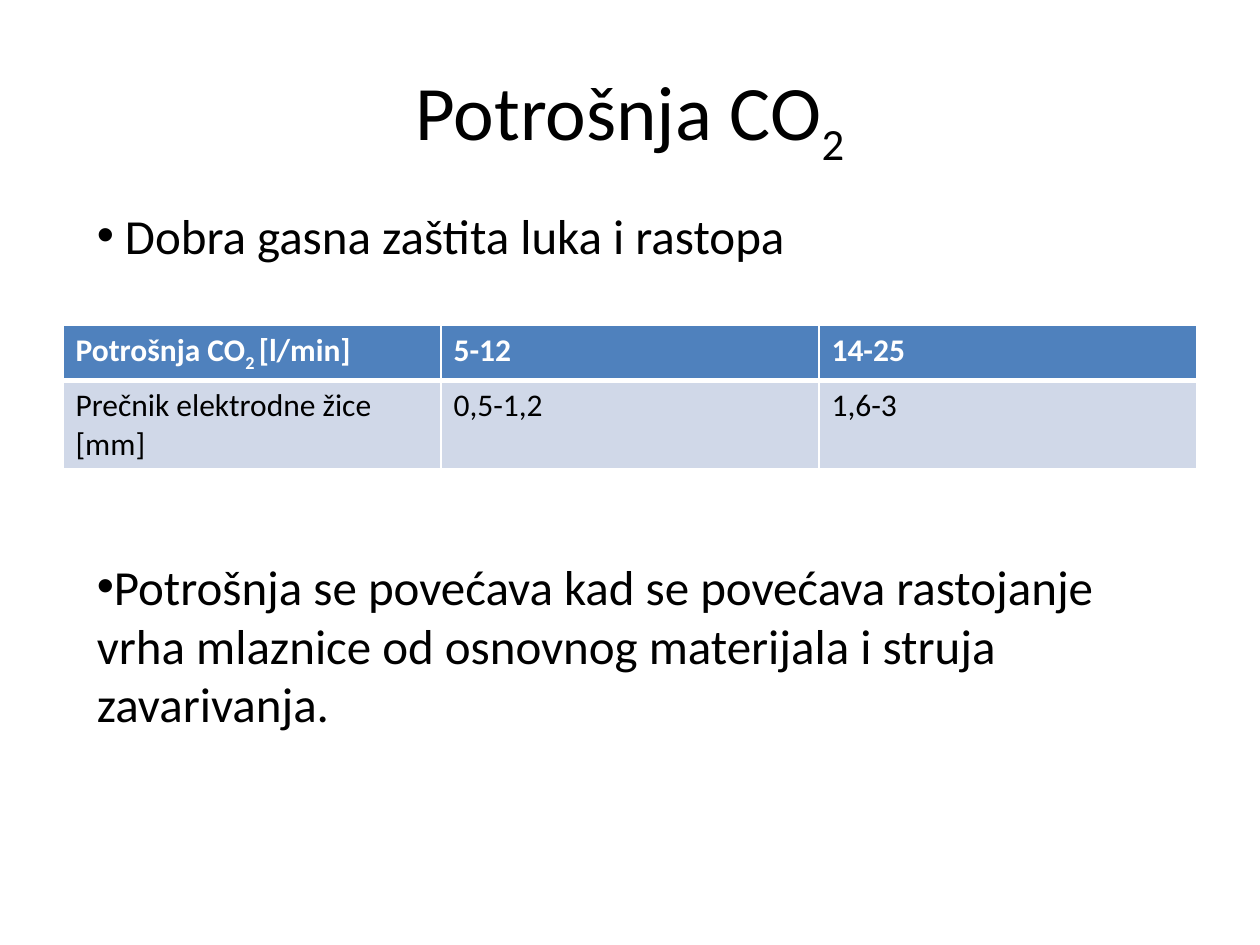
from dataclasses import dataclass

from lxml.etree import SubElement
from pptx import Presentation
from pptx.dml.color import RGBColor as Color
from pptx.enum.text import MSO_ANCHOR as Anchor, PP_ALIGN as Align
from pptx.oxml.ns import qn
from pptx.util import Inches, Pt


@dataclass(frozen=True)
class Theme:
    font: str = "Calibri"
    ink: str = "000000"
    paper: str = "FFFFFF"
    header: str = "4F81BD"
    band: str = "D0D8E8"
    title: int = 44
    body: int = 28
    cell: int = 18
    thin: int = 1
    thick: int = 3


THEME = Theme()
WIDTH, HEIGHT = 10, 7.5
TITLE_BOX = (0.05 * WIDTH, 0.04 * HEIGHT, 0.9 * WIDTH, 1.25)
TABLE_BOX = (0.05 * WIDTH, 2.58, 0.9 * WIDTH, 1.11)
BODY_BOX = (0.67, 1.58, 8.75, 4.34)
HEADER_ROW = 0.41
TABLE_GAP = 167

TITLE = [("Potrošnja CO", 0), ("2", -25)]
BULLETS = [
    " Dobra gasna zaštita luka i rastopa",
    "Potrošnja se povećava kad se povećava rastojanje vrha mlaznice "
    "od osnovnog materijala i struja zavarivanja.",
]
TABLE = [
    [[("Potrošnja CO", 0), ("2 ", -25), ("[l/min]", 0)], [("5-12", 0)], [("14-25", 0)]],
    [[("Prečnik elektrodne žice [mm]", 0)], [("0,5-1,2", 0)], [("1,6-3", 0)]],
]


def add_runs(paragraph, runs, size, color, bold=False):
    for text, baseline in runs:
        run = paragraph.add_run()
        run.text = text
        run.font.name = THEME.font
        run.font.size = Pt(size)
        run.font.bold = bold
        run.font.color.rgb = Color.from_string(color)
        if baseline:
            run.font._element.set("baseline", str(baseline * 1000))


def add_text_frame(slide, box):
    frame = slide.shapes.add_textbox(*map(Inches, box)).text_frame
    frame.word_wrap = True
    return frame


def add_title(slide, box):
    frame = add_text_frame(slide, box)
    frame.vertical_anchor = Anchor.MIDDLE
    paragraph = frame.paragraphs[0]
    paragraph.alignment = Align.CENTER
    add_runs(paragraph, TITLE, THEME.title, THEME.ink)


def add_bullets(slide, box):
    frame = add_text_frame(slide, box)
    for index, text in enumerate(BULLETS):
        paragraph = frame.add_paragraph() if index else frame.paragraphs[0]
        paragraph.space_before = Pt(TABLE_GAP if index else 0)
        properties = paragraph._p.get_or_add_pPr()
        SubElement(properties, qn("a:buFont"), typeface="Arial")
        SubElement(properties, qn("a:buChar"), char="•")
        add_runs(paragraph, [(text, 0)], THEME.body, THEME.ink)


def add_borders(cell, left, right, top, bottom):
    properties = cell._tc.get_or_add_tcPr()
    for side, width in zip("LRTB", (left, right, top, bottom)):
        line = SubElement(properties, qn(f"a:ln{side}"), w=str(Pt(width)))
        fill = SubElement(line, qn("a:solidFill"))
        SubElement(fill, qn("a:srgbClr"), val=THEME.paper)


def add_consumption_table(slide, box):
    left, top, width, height = box
    shape = slide.shapes.add_table(len(TABLE), len(TABLE[0]), *map(Inches, box))
    table = shape.table
    for column in table.columns:
        column.width = Inches(width / len(TABLE[0]))
    for row, row_height in zip(table.rows, (HEADER_ROW, height - HEADER_ROW)):
        row.height = Inches(row_height)
    styles = [
        (THEME.header, THEME.paper, True, THEME.thin, THEME.thick),
        (THEME.band, THEME.ink, False, THEME.thick, THEME.thin),
    ]
    for row, contents, style in zip(table.rows, TABLE, styles):
        fill, color, bold, upper, lower = style
        for cell, runs in zip(row.cells, contents):
            add_borders(cell, THEME.thin, THEME.thin, upper, lower)
            cell.fill.solid()
            cell.fill.fore_color.rgb = Color.from_string(fill)
            add_runs(cell.text_frame.paragraphs[0], runs, THEME.cell, color, bold)


def main():
    presentation = Presentation()
    presentation.slide_width = Inches(WIDTH)
    presentation.slide_height = Inches(HEIGHT)
    slide = presentation.slides.add_slide(presentation.slide_layouts[6])
    add_title(slide, TITLE_BOX)
    add_consumption_table(slide, TABLE_BOX)
    add_bullets(slide, BODY_BOX)
    presentation.save("out.pptx")


if __name__ == "__main__":
    main()
